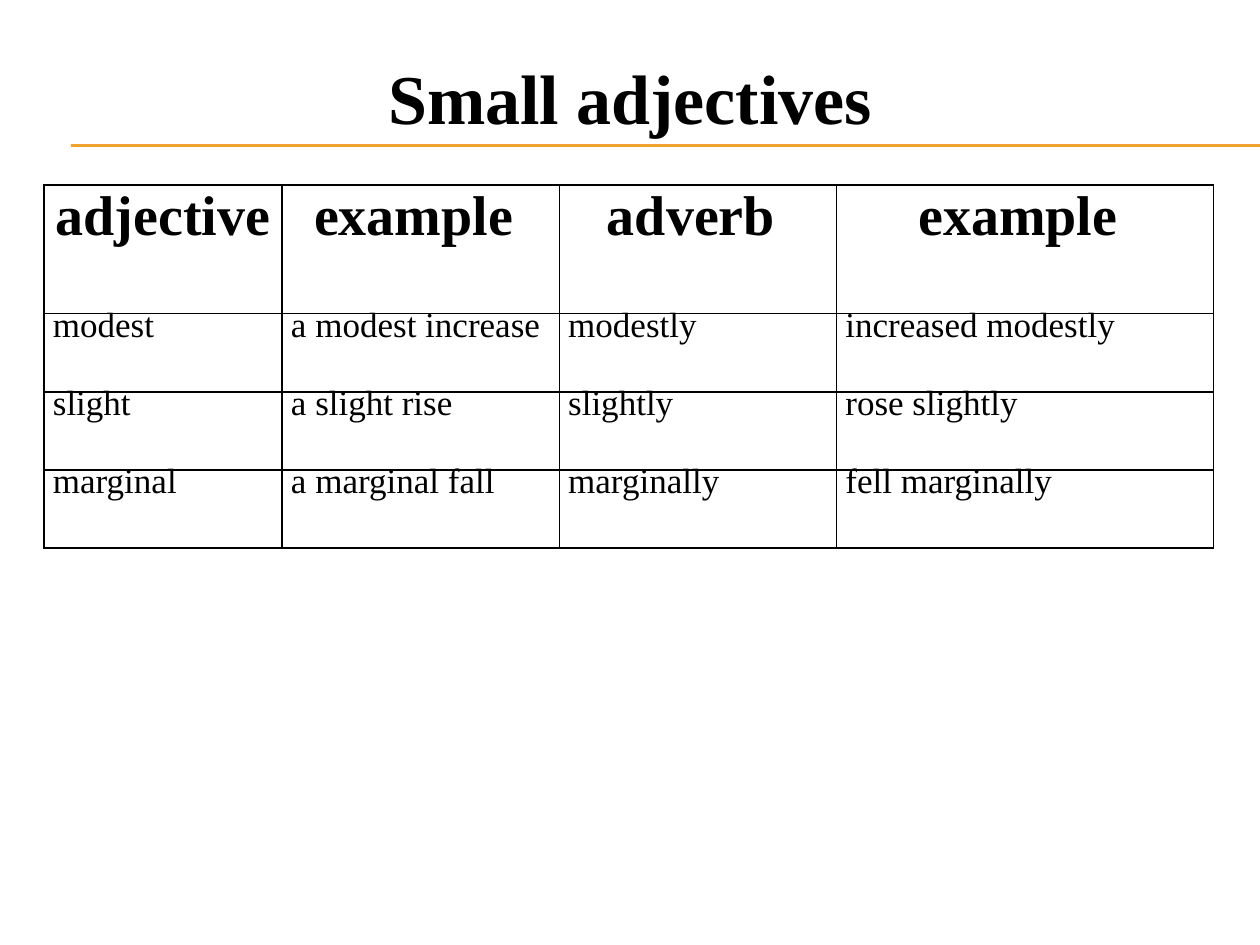
from dataclasses import dataclass

from lxml.etree import SubElement
from pptx import Presentation
from pptx.dml.color import RGBColor
from pptx.enum.shapes import MSO_CONNECTOR
from pptx.enum.text import MSO_ANCHOR, MSO_AUTO_SIZE, PP_ALIGN
from pptx.oxml import parse_xml
from pptx.oxml.ns import nsdecls, qn
from pptx.slide import Slide
from pptx.table import _Cell
from pptx.text.text import _Paragraph
from pptx.util import Inches, Pt

HUES = {"ink": "000000", "rule": "F0A22E"}
FONT = "Times New Roman"
COLS = (1.89, 2.2, 2.2, 2.99)
ROWS = (1.02, 0.62, 0.62, 0.62)
WORDS = (
    ("adjective ", "example ", "adverb ", "example "),
    ("modest", "a modest increase", "modestly", "increased modestly"),
    ("slight", "a slight rise", "slightly", "rose slightly"),
    ("marginal", "a marginal fall", "marginally", "fell marginally"),
)


@dataclass(frozen=True)
class Style:
    size: int
    bold: bool
    align: PP_ALIGN


TITLE = Style(40, True, PP_ALIGN.CENTER)
HEAD = Style(32, True, PP_ALIGN.CENTER)
BODY = Style(20, False, PP_ALIGN.LEFT)


def write(para: _Paragraph, text: str, style: Style) -> None:
    para.alignment = style.align
    run = para.add_run()
    run.text = text
    run.font.name = FONT
    run.font.size = Pt(style.size)
    run.font.bold = style.bold
    run.font.color.rgb = RGBColor.from_string(HUES["ink"])


def rule(slide: Slide, top: float) -> None:
    line = slide.shapes.add_connector(
        MSO_CONNECTOR.STRAIGHT, Inches(0.56), Inches(top), Inches(10), Inches(top)
    )
    line.line.color.rgb = RGBColor.from_string(HUES["rule"])
    line.line.width = Pt(0.75)
    SubElement(line._element.spPr, qn("a:effectLst"))


def title(slide: Slide, text: str) -> None:
    shape = slide.shapes.title
    shape.left, shape.top = Inches(0), Inches(0.36)
    shape.width, shape.height = Inches(10), Inches(0.77)
    frame = shape.text_frame
    frame.auto_size = MSO_AUTO_SIZE.NONE
    frame.vertical_anchor = MSO_ANCHOR.BOTTOM
    frame.margin_bottom = Inches(0.03)
    write(frame.paragraphs[0], text, TITLE)


def border(cell: _Cell) -> None:
    props = cell._tc.get_or_add_tcPr()
    for spot, side in enumerate("LRTB"):
        props.insert(spot, parse_xml(
            f'<a:ln{side} {nsdecls("a")} w="{Pt(1)}"><a:solidFill>'
            f'<a:srgbClr val="{HUES["ink"]}"/></a:solidFill></a:ln{side}>'
        ))


def fill(cell: _Cell, text: str, style: Style) -> None:
    cell.margin_left = cell.margin_right = Inches(0.07)
    cell.margin_top = cell.margin_bottom = Inches(0)
    cell.fill.background()
    border(cell)
    para = cell.text_frame.paragraphs[0]
    if style is BODY:
        para.line_spacing = Pt(18)
        para.space_after = Pt(6)
    write(para, text, style)


def grid(slide: Slide) -> None:
    table = slide.shapes.add_table(
        len(ROWS), len(COLS), Inches(0.35), Inches(1.47),
        Inches(sum(COLS)), Inches(sum(ROWS))
    ).table
    table.first_row = table.horz_banding = False
    for col, width in zip(table.columns, COLS):
        col.width = Inches(width)
    for num, (row, height) in enumerate(zip(table.rows, ROWS)):
        row.height = Inches(height)
        for cell, text in zip(row.cells, WORDS[num]):
            fill(cell, text, BODY if num else HEAD)


def main() -> None:
    """Build the slide on small adjectives and save it."""
    deck = Presentation()
    deck.slide_width, deck.slide_height = Inches(10), Inches(7.5)
    slide = deck.slides.add_slide(deck.slide_layouts[5])
    for top in (1.15, 1.16):
        rule(slide, top)
    title(slide, "Small adjectives")
    grid(slide)
    deck.save("out.pptx")


if __name__ == "__main__":
    main()
